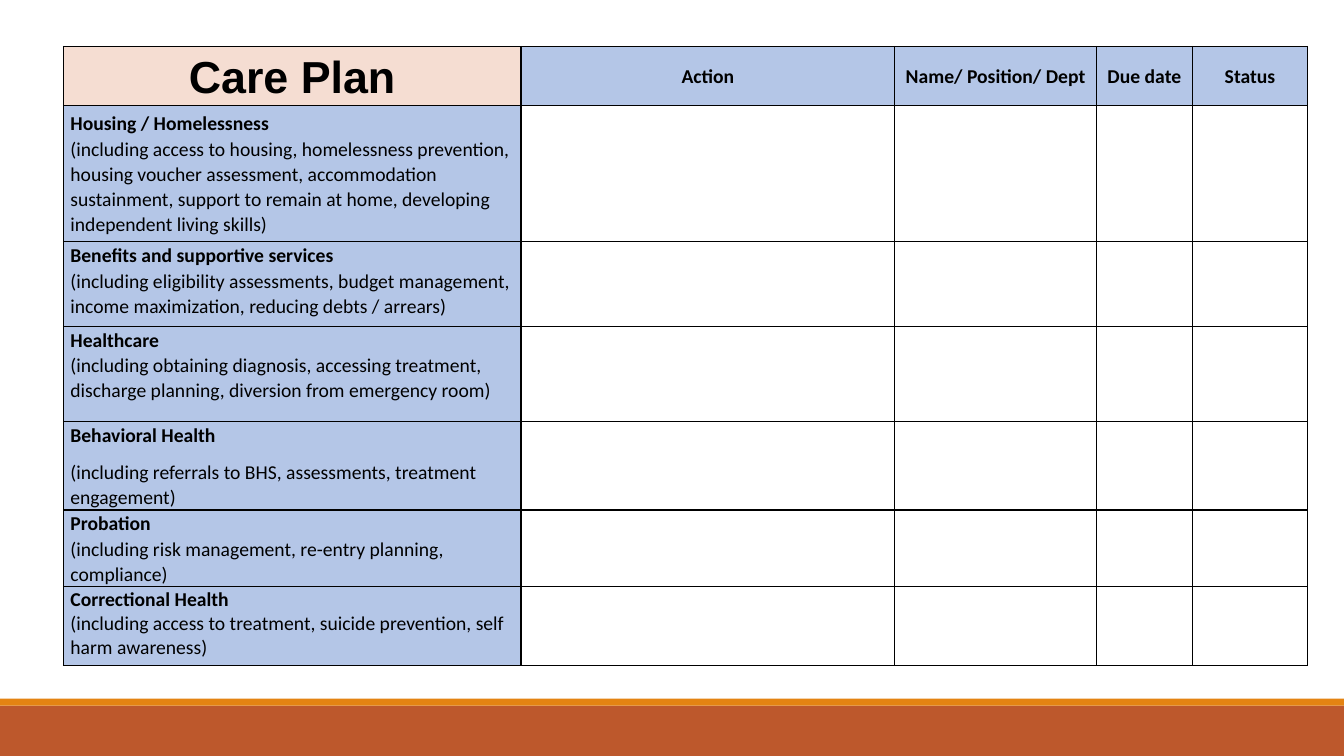
from dataclasses import dataclass

from lxml import etree
from pptx import Presentation
from pptx.dml.color import RGBColor
from pptx.enum.shapes import MSO_SHAPE
from pptx.enum.text import MSO_ANCHOR, PP_ALIGN
from pptx.oxml.ns import qn
from pptx.util import Pt

RECTANGLE = MSO_SHAPE.RECTANGLE
TOP, MIDDLE = MSO_ANCHOR.TOP, MSO_ANCHOR.MIDDLE
LEFT, CENTER = PP_ALIGN.LEFT, PP_ALIGN.CENTER

BLACK = RGBColor(0x00, 0x00, 0x00)
PEACH = RGBColor(0xF5, 0xDD, 0xD2)
LIGHT_BLUE = RGBColor(0xB4, 0xC6, 0xE7)
RUST = RGBColor(0xBD, 0x58, 0x2C)
ORANGE = RGBColor(0xE4, 0x83, 0x12)

SLIDE_WIDTH, SLIDE_HEIGHT = 960, 540
TABLE_LEFT, TABLE_TOP = 45.3, 33.1
HEADER_HEIGHT = 42


@dataclass
class Band:
    top: float
    height: float
    color: RGBColor


@dataclass
class Column:
    heading: str
    width: float
    fill: RGBColor = LIGHT_BLUE
    font: str = "Calibri"
    size: float = 14
    space_after: float = 0


@dataclass
class Need:
    name: str
    scope: str
    height: float
    anchor: MSO_ANCHOR = TOP
    name_space_after: float = 0
    line_spacing: float = 1.06


BANDS = [Band(504, 36, RUST), Band(499, 5, ORANGE)]

COLUMNS = [
    Column("Care Plan", 326.9, PEACH, "Arial", 32, 8),
    Column("Action", 267),
    Column("Name/ Position/ Dept", 144),
    Column("Due date", 68.5),
    Column("Status", 82.5),
]

NEEDS = [
    Need("Housing / Homelessness",
         "(including access to housing, homelessness prevention, housing voucher "
         "assessment, accommodation sustainment, support to remain at home, "
         "developing independent living skills)", 97.7, MIDDLE),
    Need("Benefits and supportive services",
         "(including eligibility assessments, budget management, income "
         "maximization, reducing debts / arrears)", 60.2),
    Need("Healthcare",
         "(including obtaining diagnosis, accessing treatment, discharge planning, "
         "diversion from emergency room)", 68.4),
    Need("Behavioral Health",
         "(including referrals to BHS, assessments, treatment engagement)",
         62.7, name_space_after=8),
    Need("Probation",
         "(including risk management, re-entry planning, compliance)", 55),
    Need("Correctional Health",
         "(including access to treatment, suicide prevention, self harm awareness)",
         56, line_spacing=1.0),
]


def add_band(slide, band: Band) -> None:
    bar = slide.shapes.add_shape(RECTANGLE, 0, Pt(band.top), Pt(SLIDE_WIDTH), Pt(band.height))
    bar.shadow.inherit = False
    bar.fill.solid()
    bar.fill.fore_color.rgb = band.color
    bar.line.fill.background()


def format_cell(cell, fill: RGBColor | None, anchor: MSO_ANCHOR) -> None:
    cell.margin_left = cell.margin_right = Pt(5)
    cell.margin_top, cell.margin_bottom = Pt(0.7), 0
    cell.vertical_anchor = anchor
    # Black border on all four sides
    properties = cell._tc.get_or_add_tcPr()
    for side in ("a:lnL", "a:lnR", "a:lnT", "a:lnB"):
        border = etree.SubElement(properties, qn(side), w=str(Pt(1)))
        solid = etree.SubElement(border, qn("a:solidFill"))
        etree.SubElement(solid, qn("a:srgbClr"), val=str(BLACK))
    if fill is None:
        cell.fill.background()
    else:
        cell.fill.solid()
        cell.fill.fore_color.rgb = fill


def write(paragraph, text: str, bold: bool, align: PP_ALIGN = LEFT, font: str = "Calibri",
          size: float = 14, spacing: float = 1.06, after: float = 0) -> None:
    paragraph.alignment = align
    paragraph.line_spacing = spacing
    paragraph.space_after = Pt(after)
    run = paragraph.add_run()
    run.text = text
    run.font.name = font
    run.font.size = Pt(size)
    run.font.bold = bold
    run.font.color.rgb = BLACK


def add_care_plan(slide) -> None:
    heights = [HEADER_HEIGHT] + [need.height for need in NEEDS]
    care_plan = slide.shapes.add_table(
        len(heights), len(COLUMNS), Pt(TABLE_LEFT), Pt(TABLE_TOP),
        Pt(sum(column.width for column in COLUMNS)), Pt(sum(heights))).table
    care_plan.first_row = care_plan.horz_banding = False
    for row, height in zip(care_plan.rows, heights):
        row.height = Pt(height)

    # Header row
    for index, column in enumerate(COLUMNS):
        care_plan.columns[index].width = Pt(column.width)
        heading = care_plan.cell(0, index)
        format_cell(heading, column.fill, MIDDLE)
        write(heading.text_frame.paragraphs[0], column.heading, True, CENTER,
              column.font, column.size, after=column.space_after)

    # One row per need, with the other columns left open
    for index, need in enumerate(NEEDS, start=1):
        need_cell, *open_cells = care_plan.rows[index].cells
        format_cell(need_cell, LIGHT_BLUE, need.anchor)
        write(need_cell.text_frame.paragraphs[0], need.name, True,
              spacing=need.line_spacing, after=need.name_space_after)
        write(need_cell.text_frame.add_paragraph(), need.scope, False,
              spacing=need.line_spacing)
        for open_cell in open_cells:
            format_cell(open_cell, None, TOP)


def main() -> None:
    presentation = Presentation()
    presentation.slide_width = Pt(SLIDE_WIDTH)
    presentation.slide_height = Pt(SLIDE_HEIGHT)
    slide = presentation.slides.add_slide(presentation.slide_layouts[6])
    for band in BANDS:
        add_band(slide, band)
    add_care_plan(slide)
    presentation.save("out.pptx")


if __name__ == "__main__":
    main()
